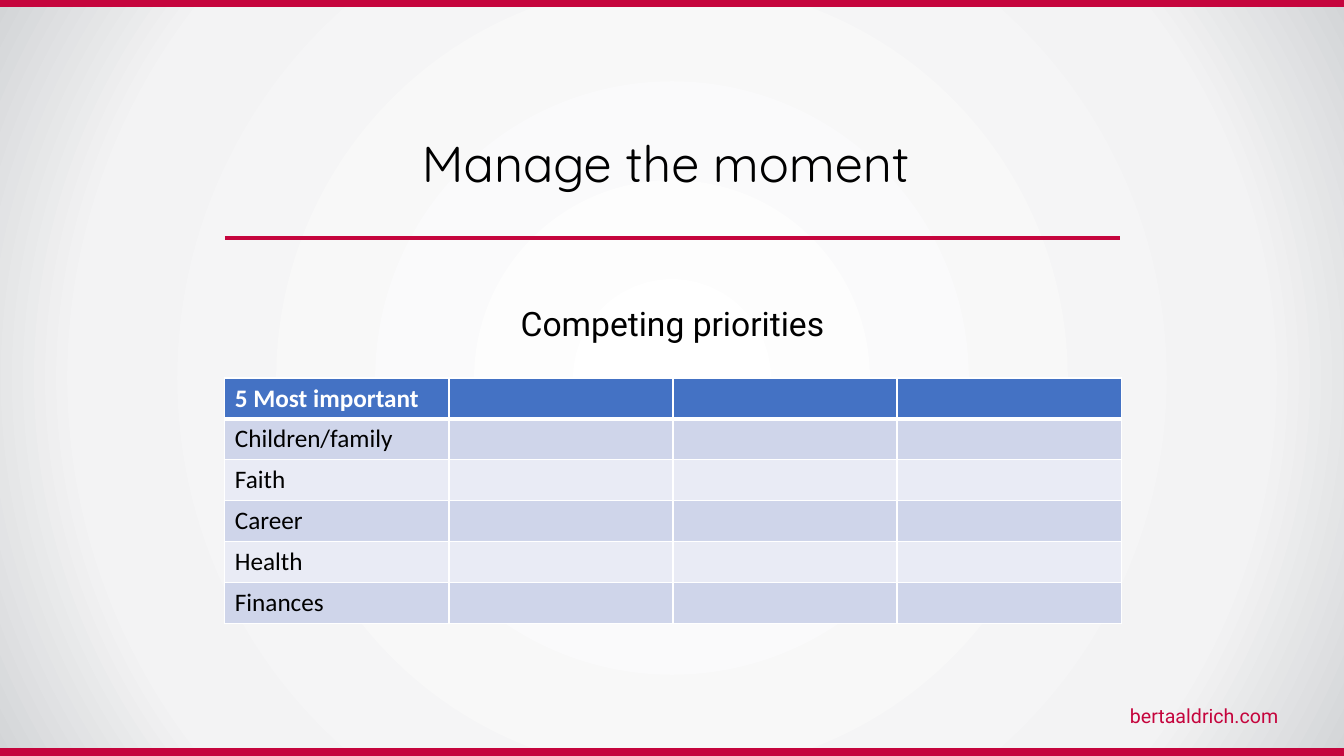
from lxml.etree import SubElement
from pptx import Presentation
from pptx.dml.color import RGBColor
from pptx.enum.shapes import MSO_CONNECTOR, MSO_SHAPE
from pptx.enum.text import MSO_ANCHOR, MSO_AUTO_SIZE, PP_ALIGN
from pptx.oxml import parse_xml
from pptx.oxml.ns import nsdecls, qn
from pptx.util import Inches, Pt

CRIMSON, BLACK, WHITE = "C5053D", "000000", "FFFFFF"
HEADER_BLUE, BANDS = "4472C4", ("CFD5EA", "E9EBF5")
PRIORITIES = ("5 Most important", "Children/family", "Faith", "Career", "Health", "Finances")
COLUMN_COUNT = 4
BACKGROUND_STOPS = ((0, "FFFFFF"), (77, "F3F3F4"), (100, "D3D5D7"))


def colour(value):
    """Turn a hex string into a colour."""
    return RGBColor.from_string(value)


def paint_background(page):
    """Fill the page with a circular gradient."""
    page.background.fill.solid()
    solid = next(page.element.iter(qn("a:solidFill")))
    stops = "".join(
        f'<a:gs pos="{position * 1000}"><a:srgbClr val="{value}"/></a:gs>'
        for position, value in BACKGROUND_STOPS
    )
    gradient = parse_xml(
        f'<a:gradFill {nsdecls("a")} rotWithShape="1"><a:gsLst>{stops}</a:gsLst>'
        '<a:path path="circle"><a:fillToRect l="50000" t="50000" r="50000" b="50000"/>'
        '</a:path></a:gradFill>'
    )
    solid.getparent().replace(solid, gradient)


def add_bar(page, top):
    """Draw a crimson bar across the page."""
    bar = page.shapes.add_shape(
        MSO_SHAPE.RECTANGLE, 0, Inches(top), Inches(13.33), Inches(0.07)
    )
    bar.shadow.inherit = False
    bar.fill.solid()
    bar.fill.fore_color.rgb = colour(CRIMSON)
    bar.line.color.rgb = colour(CRIMSON)
    bar.line.width = Pt(1)


def add_rule(page):
    """Draw the line below the title."""
    rule = page.shapes.add_connector(
        MSO_CONNECTOR.STRAIGHT, Inches(2.23), Inches(2.36), Inches(11.11), Inches(2.36)
    )
    rule.line.color.rgb = colour(CRIMSON)
    rule.line.width = Pt(3)
    SubElement(rule.element.spPr, qn("a:effectLst"))


def add_span(para, text, font, size, value, bold=False):
    """Add one formatted run to a paragraph."""
    span = para.add_run()
    span.text = text
    span.font.name = font
    span.font.size = Pt(size)
    span.font.bold = bold
    span.font.color.rgb = colour(value)


def write_box(box, bounds, text, font, size, value, align, anchor=MSO_ANCHOR.TOP, spacing=1.0):
    """Place a text shape and write its single paragraph."""
    box.left, box.top, box.width, box.height = (Inches(length) for length in bounds)
    frame = box.text_frame
    frame.word_wrap = True
    frame.auto_size = MSO_AUTO_SIZE.NONE
    frame.vertical_anchor = anchor
    para = frame.paragraphs[0]
    properties = para._p.get_or_add_pPr()
    properties.set("marL", "0")
    properties.set("indent", "0")
    SubElement(properties, qn("a:buNone"))
    para.alignment = align
    para.line_spacing = spacing
    para.space_before = Pt(0)
    add_span(para, text, font, size, value)


def format_cell(cell, fill, bottom_width):
    """Set the fill and white borders of a cell."""
    cell.fill.solid()
    cell.fill.fore_color.rgb = colour(fill)
    properties = cell._tc.get_or_add_tcPr()
    widths = (("lnL", 1), ("lnR", 1), ("lnT", 1), ("lnB", bottom_width))
    for index, (side, width) in enumerate(widths):
        border = parse_xml(
            f'<a:{side} {nsdecls("a")} w="{Pt(width)}"><a:solidFill>'
            f'<a:srgbClr val="{WHITE}"/></a:solidFill></a:{side}>'
        )
        properties.insert(index, border)


def add_priorities(page):
    """Add the table of priorities."""
    table = page.shapes.add_table(
        len(PRIORITIES), COLUMN_COUNT, Inches(2.23), Inches(3.75), Inches(8.89), Inches(2.43)
    ).table
    for index, priority in enumerate(PRIORITIES):
        header = index == 0
        fill = HEADER_BLUE if header else BANDS[(index - 1) % 2]
        for cell in table.rows[index].cells:
            format_cell(cell, fill, 3 if header else 1)
        para = table.cell(index, 0).text_frame.paragraphs[0]
        add_span(para, priority, "Calibri", 18, WHITE if header else BLACK, header)


def main():
    """Build and save the deck."""
    deck = Presentation()
    deck.slide_width, deck.slide_height = Inches(13.33), Inches(7.5)
    page = deck.slides.add_slide(deck.slide_layouts[1])
    paint_background(page)
    for top in (7.43, -0.01):
        add_bar(page, top)
    address = page.shapes.add_textbox(0, 0, 0, 0)
    write_box(address, (9.5, 6.93, 3.28, 0.34), "bertaaldrich.com", "Roboto", 14, CRIMSON,
              PP_ALIGN.RIGHT)
    write_box(page.shapes.title, (2.23, 1.35, 8.88, 0.59), "Manage the moment ", "Quicksand",
              36, BLACK, PP_ALIGN.CENTER, MSO_ANCHOR.MIDDLE, 0.9)
    write_box(page.placeholders[1], (0.92, 3, 11.5, 3.13), "Competing priorities", "Roboto",
              24, BLACK, PP_ALIGN.CENTER, spacing=0.9)
    add_rule(page)
    add_priorities(page)
    deck.save("out.pptx")


if __name__ == "__main__":
    main()
